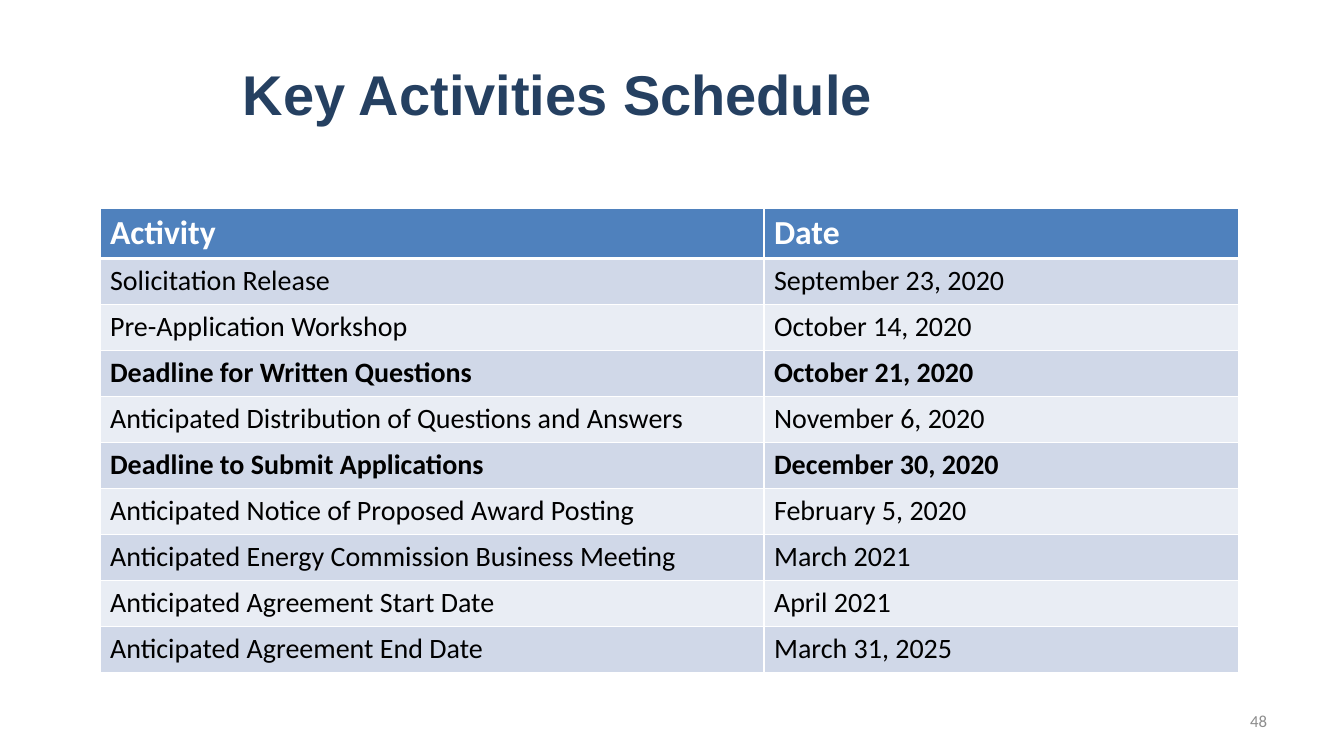
import pptx
import pptx.util
import pptx.dml.color
import pptx.enum.text
import pptx.oxml
import pptx.oxml.ns

PX = 914400 / 100.8
ANCHOR = pptx.enum.text.MSO_ANCHOR
ALIGN = pptx.enum.text.PP_ALIGN


def px(n):
    return pptx.util.Emu(round(n * PX))


def style(para, text, color, **form):
    run = para.add_run()
    run.text = text
    run.font.color.rgb = pptx.dml.color.RGBColor.from_string(color)
    for key, value in form.items():
        setattr(run.font, key, value)


deck = pptx.Presentation()
deck.slide_width, deck.slide_height = px(1344), px(756)
slide = deck.slides.add_slide(deck.slide_layouts[6])

# Title and page number
labels = [
    ((233, 30, 787, 126), "Key Activities Schedule", "254061", ALIGN.LEFT,
     {"name": "Arial", "size": pptx.util.Pt(40), "bold": True}),
    ((964, 701, 313, 40), "48", "8C8C8C", ALIGN.RIGHT,
     {"name": "Calibri", "size": pptx.util.Pt(12)}),
]
for place, text, color, align, form in labels:
    frame = slide.shapes.add_textbox(*map(px, place)).text_frame
    frame.word_wrap = True
    frame.vertical_anchor = ANCHOR.MIDDLE
    frame.paragraphs[0].alignment = align
    style(frame.paragraphs[0], text, color, **form)

# Schedule table
rows = [
    ("Activity", "Date"),
    ("Solicitation Release", "September 23, 2020"),
    ("Pre-Application Workshop", "October 14, 2020"),
    ("Deadline for Written Questions", "October 21, 2020"),
    ("Anticipated Distribution of Questions and Answers", "November 6, 2020"),
    ("Deadline to Submit Applications", "December 30, 2020"),
    ("Anticipated Notice of Proposed Award Posting", "February 5, 2020"),
    ("Anticipated Energy Commission Business Meeting", "March 2021"),
    ("Anticipated Agreement Start Date", "April 2021"),
    ("Anticipated Agreement End Date", "March 31, 2025"),
]
widths = (664, 475)
high = 46
table = slide.shapes.add_table(
    len(rows), len(widths), px(100), px(208),
    px(sum(widths)), px(high * len(rows))).table
for col, width in zip(table.columns, widths):
    col.width = px(width)

for r, row in enumerate(rows):
    head = r == 0
    table.rows[r].height = px(high)
    fill = "4F81BD" if head else ("E9EDF4", "D0D8E8")[r % 2]
    for c, text in enumerate(row):
        cell = table.cell(r, c)
        style(cell.text_frame.paragraphs[0], text,
              "FFFFFF" if head else "000000", name="Calibri",
              size=pptx.util.Pt(24 if head else 20),
              bold=head or row[0].startswith("Deadline"))

        # White borders, thick under the header
        for side in "LRTB":
            thick = (head and side == "B") or (r == 1 and side == "T")
            width = pptx.util.Pt(3 if thick else 1)
            cell._tc.get_or_add_tcPr().append(pptx.oxml.parse_xml(
                f'<a:ln{side} {pptx.oxml.ns.nsdecls("a")} w="{width}">'
                '<a:solidFill><a:srgbClr val="FFFFFF"/></a:solidFill>'
                f'</a:ln{side}>'))
        cell.fill.solid()
        cell.fill.fore_color.rgb = pptx.dml.color.RGBColor.from_string(fill)

deck.save("out.pptx")
